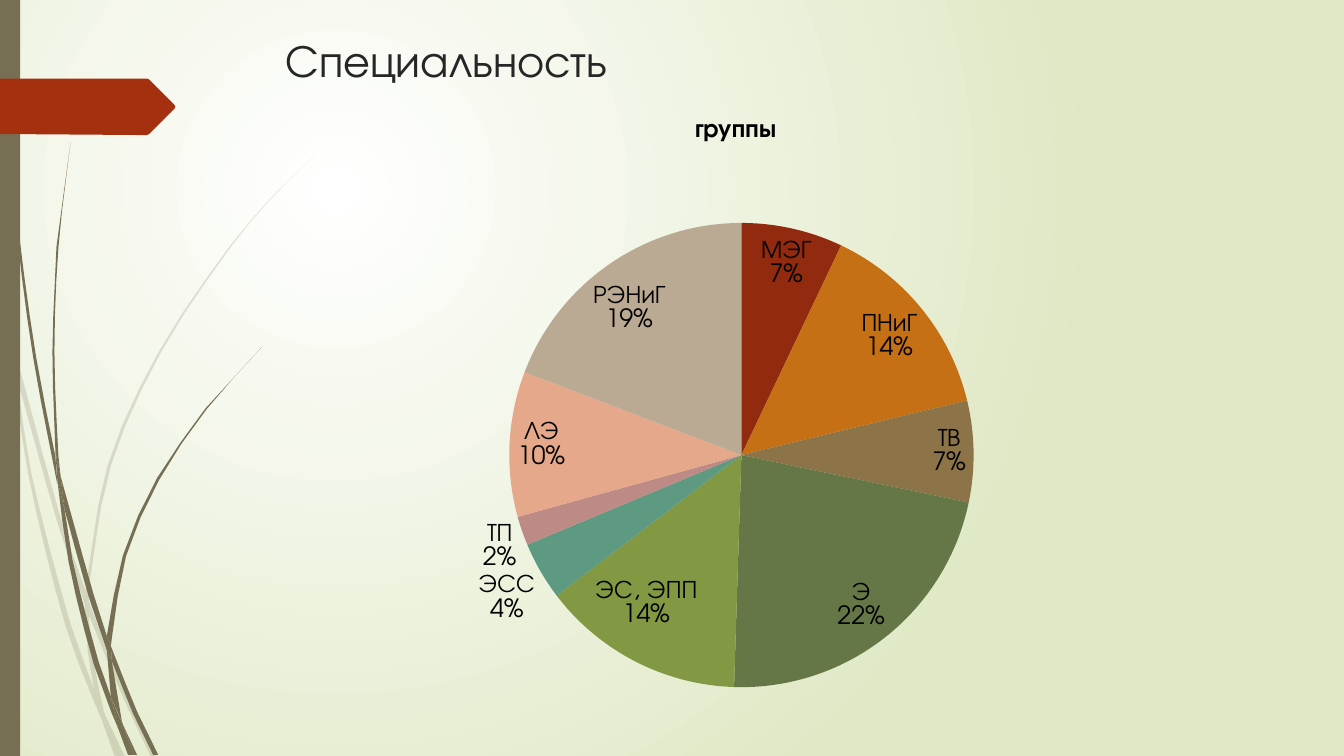
from math import dist

from lxml import etree
from pptx import Presentation
from pptx.chart.data import CategoryChartData
from pptx.dml.color import RGBColor
from pptx.enum.chart import XL_CHART_TYPE, XL_LABEL_POSITION
from pptx.enum.shapes import MSO_SHAPE
from pptx.enum.text import MSO_ANCHOR, PP_ALIGN
from pptx.oxml import parse_xml
from pptx.oxml.ns import nsdecls, qn
from pptx.util import Inches, Pt

PIE = XL_CHART_TYPE.PIE
BEST_FIT = XL_LABEL_POSITION.BEST_FIT
RECTANGLE = MSO_SHAPE.RECTANGLE
TOP = MSO_ANCHOR.TOP
LEFT = PP_ALIGN.LEFT

FONT = "TeX Gyre Adventor"
WHITE = RGBColor(0xFF, 0xFF, 0xFF)
BLACK = RGBColor(0, 0, 0)
CHARCOAL = RGBColor(0x26, 0x26, 0x26)
PALE_GREEN = RGBColor(0xDF, 0xE8, 0xC4)
OLIVE = RGBColor(0x76, 0x6F, 0x54)
RUST = RGBColor(0xA5, 0x30, 0x10)

SPECIALTIES = [
    ("МЭГ", 7, RGBColor(0x92, 0x2A, 0x0F)),
    ("ПНиГ", 14, RGBColor(0xC5, 0x70, 0x14)),
    ("ТВ", 7, RGBColor(0x8C, 0x73, 0x48)),
    ("Э", 22, RGBColor(0x65, 0x77, 0x47)),
    ("ЭС, ЭПП", 14, RGBColor(0x82, 0x98, 0x43)),
    ("ЭСС", 4, RGBColor(0x5E, 0x9A, 0x82)),
    ("ТП", 2, RGBColor(0xBE, 0x8A, 0x85)),
    ("ЛЭ", 10, RGBColor(0xE6, 0xA8, 0x8A)),
    ("РЭНиГ", 19, RGBColor(0xBA, 0xAA, 0x93)),
]

FAINT_BLADES = [
    ([(.11, 3.5), (.09, 3.22), (0, 2.82)], [(0, 2.99), (.1, 3.44)]),
    ([(.17, 3.76), (.58, 5.22), (.84, 5.99)], [(.85, 5.86), (.62, 5.2), (.14, 3.45)]),
    ([(.88, 6.1), (1.23, 6.94), (1.5, 7.51)],
     [(1.55, 7.51), (1.27, 6.92), (.92, 6.07), (.88, 5.96)]),
    ([(1.05, 7.11), (1.19, 7.51)], [(1.24, 7.51)]),
    ([(.11, 3.5), (.28, 4.7), (.65, 6.21), (.92, 6.93), (1.01, 7.14)],
     [(.99, 7.07), (.93, 6.83), (.7, 6.19), (.31, 4.69), (.17, 3.76)]),
    ([(.84, 5.99), (.87, 6.46), (.93, 6.83), (.96, 6.92), (1.05, 7.11)],
     [(1.03, 7.06), (.91, 6.46), (.88, 6.1), (.88, 6.08)]),
    ([(.88, 5.96), (.88, 5.84), (1.1, 4.62), (1.6, 3.49), (2.29, 2.45), (2.68, 1.98),
      (3.12, 1.54)],
     [(2.68, 1.97), (2.28, 2.44), (1.58, 3.48), (1.07, 4.61), (.85, 5.84), (.85, 5.86)]),
    ([(1.01, 7.14), (1.14, 7.51)], [(1.19, 7.51)]),
    ([(.85, 5.86), (.84, 5.99), (.88, 6.08)], [(.88, 6.1), (.88, 5.96)]),
    ([(.93, 6.83), (.99, 7.07), (1.01, 7.14), (1.19, 7.51)], [(1.05, 7.11), (.96, 6.92)]),
]
SOLID_BLADES = [
    ([(.03, 0), (.07, 1.1), (.17, 2.33), (.33, 3.55), (.57, 4.81)],
     [(.55, 4.53), (.36, 3.55), (.19, 2.32), (.08, 1.09), (.04, 0)]),
    ([(.64, 5.05), (.88, 5.92), (1.06, 6.45)], [(1.06, 6.31), (.93, 5.9), (.6, 4.72)]),
    ([(1.11, 6.56), (1.32, 7.08), (1.52, 7.49)],
     [(1.57, 7.49), (1.36, 7.06), (1.1, 6.41)]),
    ([(.57, 4.77), (.68, 5.57), (.93, 6.59), (1.11, 7.08), (1.17, 7.22)],
     [(1.16, 7.17), (1.1, 6.91), (.98, 6.57), (.72, 5.56), (.64, 5.05)]),
    ([(.6, 4.72), (.58, 4.53), (.54, 3.49), (.58, 2.45), (.7, 1.41)],
     [(.56, 2.45), (.52, 3.49), (.55, 4.49)]),
    ([(1.22, 7.19), (1.33, 7.49)], [(1.36, 7.49)]),
    ([(.55, 4.49), (.57, 4.77), (.64, 5.05)], [(.6, 4.72)]),
    ([(1.1, 6.41), (1.11, 6.33), (1.25, 5.52), (1.58, 4.76), (2.05, 4.06), (2.6, 3.44)],
     [(2.04, 4.05), (1.56, 4.74), (1.22, 5.51), (1.06, 6.31)]),
    ([(1.17, 7.22), (1.27, 7.49)], [(1.31, 7.49)]),
    ([(1.06, 6.45), (1.1, 6.91), (1.22, 7.19)], [(1.21, 7.16), (1.11, 6.56)]),
    ([(1.06, 6.31), (1.06, 6.45), (1.11, 6.56)], [(1.1, 6.41)]),
    ([(1.1, 6.91), (1.17, 7.22), (1.3, 7.49)], [(1.33, 7.49), (1.22, 7.19), (1.16, 7.06)]),
]
ARROW = [(0, 0), (1.46, 0), (1.48, .01), (1.73, .26), (1.74, .28), (1.73, .3),
         (1.48, .55), (1.46, .56), (1.36, .56), (0, .55)]


def smooth(anchors, steps_per_inch=2.5):
    """Return points on a smooth curve through the anchors."""
    last = len(anchors) - 1
    slopes = []
    for i, anchor in enumerate(anchors):
        before, after = anchors[max(i - 1, 0)], anchors[min(i + 1, last)]
        length = dist(before, anchor) + dist(anchor, after) or 1
        slopes.append([(b - a) / length for a, b in zip(before, after)])
    points = [anchors[0]]
    for i in range(last):
        start, end = anchors[i:i + 2]
        chord = dist(start, end)
        steps = max(1, round(chord * steps_per_inch))
        for t in (step / steps for step in range(1, steps + 1)):
            points.append(tuple(
                (1 + 2 * t) * (1 - t) ** 2 * a + t * t * (3 - 2 * t) * b
                + chord * (t * (1 - t) ** 2 * m - t * t * (1 - t) * n)
                for a, b, m, n in zip(start, end, slopes[i], slopes[i + 1])))
    return points


def paint(shape, color, alpha=100):
    """Fill a shape with one colour, without line or shadow."""
    shape.shadow.inherit = False
    shape.fill.solid()
    shape.fill.fore_color.rgb = color
    shape.line.fill.background()
    if alpha < 100:
        tint = shape.fill._xPr.find(".//" + qn("a:srgbClr"))
        etree.SubElement(tint, qn("a:alpha")).set("val", str(alpha * 1000))


def add_outline(shapes, points, left, top):
    """Draw a closed outline offset by left and top."""
    placed = [(Inches(left + x), Inches(top + y)) for x, y in points]
    builder = shapes.build_freeform(*placed[0])
    builder.add_line_segments(placed[1:], close=True)
    return builder.convert_to_shape()


def add_background(slide):
    """Give the slide a circular white to green gradient."""
    fill = slide.background.fill
    fill.gradient()
    for stop, color in zip(fill.gradient_stops, (WHITE, PALE_GREEN)):
        stop.color.rgb = color
    direction = slide.background._cSld.find(".//" + qn("a:lin"))
    direction.getparent().replace(direction, parse_xml(
        f'<a:path {nsdecls("a")} path="circle">'
        '<a:fillToRect l="50000" t="50000" r="100000" b="100000"/></a:path>'))


def add_grass(slide, blades, alpha, left=0, top=0):
    """Draw a group of curved grass blades."""
    grass = slide.shapes.add_group_shape()
    for outward, back in blades:
        blade = add_outline(grass.shapes, smooth(outward) + smooth(back), left, top)
        paint(blade, OLIVE, alpha)


def add_side_band(slide, left, top, width, height):
    """Draw the vertical band and the arrow that lies over it."""
    band = slide.shapes.add_shape(
        RECTANGLE, Inches(left), Inches(top), Inches(width), Inches(height))
    paint(band, OLIVE)
    paint(add_outline(slide.shapes, ARROW, left, top + .78), RUST)


def add_title(slide, left, top, width, height):
    """Place and format the title."""
    title = slide.shapes.title
    title.left, title.top = Inches(left), Inches(top)
    title.width, title.height = Inches(width), Inches(height)
    title.text_frame.vertical_anchor = TOP
    paragraph = title.text_frame.paragraphs[0]
    paragraph.alignment = LEFT
    run = paragraph.add_run()
    run.text = "Специальность"
    run.font.name, run.font.size = FONT, Pt(32.4)
    run.font.color.rgb = CHARCOAL


def add_groups_pie(slide, left, top, width, height):
    """Draw the pie of groups by specialty."""
    names, shares, colors = zip(*SPECIALTIES)
    data = CategoryChartData()
    data.categories = names
    data.add_series("группы", shares)
    chart = slide.shapes.add_chart(
        PIE, Inches(left), Inches(top), Inches(width), Inches(height), data).chart
    chart.has_legend = False
    chart.font.name, chart.font.size = FONT, Pt(18)
    chart.font.color.rgb = BLACK
    heading = chart.chart_title.text_frame.paragraphs[0].add_run()
    heading.text = "группы"
    heading.font.name, heading.font.size, heading.font.bold = FONT, Pt(18), True
    heading.font.color.rgb = BLACK
    plot = chart.plots[0]
    plot.vary_by_categories = True
    groups = plot.series[0]
    for i, color in enumerate(colors):
        fill = groups.points[i].format.fill
        fill.solid()
        fill.fore_color.rgb = color
    labels = groups.data_labels
    labels.show_category_name = labels.show_percentage = True
    labels.show_value = False
    labels.number_format, labels.number_format_is_linked = "0%", False
    labels.position = BEST_FIT
    labels._element.find(qn("c:showBubbleSize")).addnext(
        parse_xml(f'<c:separator {nsdecls("c")}>\n</c:separator>'))
    area = chart._chartSpace.find(".//" + qn("c:plotArea"))
    for layout in area.findall(qn("c:layout")):
        area.remove(layout)
    area.insert(0, parse_xml(
        f'<c:layout {nsdecls("c")}><c:manualLayout><c:layoutTarget val="inner"/>'
        '<c:xMode val="edge"/><c:yMode val="edge"/><c:x val="0.31"/><c:y val="0.2"/>'
        '<c:w val="0.39"/><c:h val="0.72"/></c:manualLayout></c:layout>'))


def main():
    """Build and save the slide."""
    deck = Presentation()
    deck.slide_width, deck.slide_height = Inches(13.33), Inches(7.5)
    slide = deck.slides.add_slide(deck.slide_layouts[5])
    add_background(slide)
    add_grass(slide, FAINT_BLADES, 20)
    add_grass(slide, SOLID_BLADES, 100)
    add_side_band(slide, 0, 0, .2, 7.5)
    add_title(slide, 2.73, .27, 9.75, .63)
    add_groups_pie(slide, 1.39, .92, 11.81, 6.42)
    deck.save("out.pptx")


if __name__ == "__main__":
    main()
